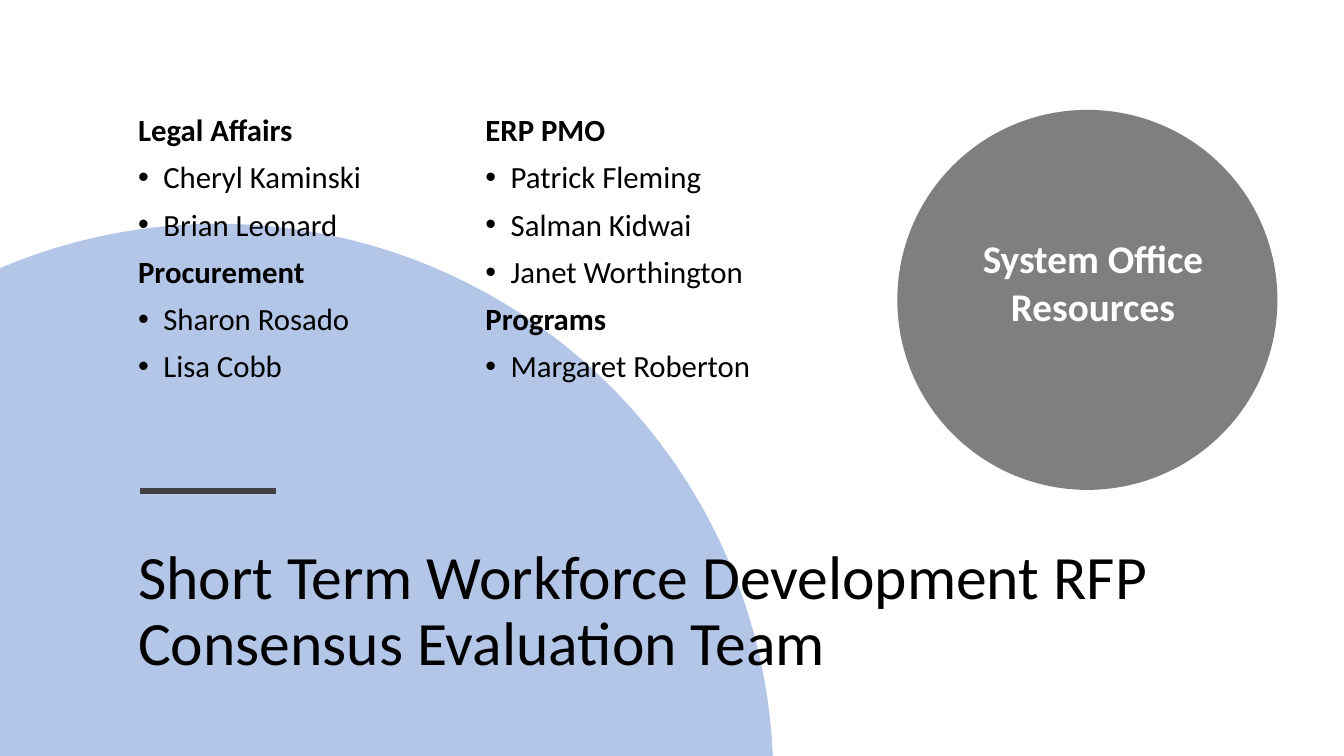
import math

import pptx
import pptx.util
import pptx.dml.color
import pptx.enum.shapes
import pptx.enum.text
import pptx.oxml
import pptx.oxml.ns

Inches = pptx.util.Inches
Pt = pptx.util.Pt
RGBColor = pptx.dml.color.RGBColor
ALIGN = pptx.enum.text.PP_ALIGN
ANCHOR = pptx.enum.text.MSO_ANCHOR

BLACK = RGBColor(0x00, 0x00, 0x00)
WHITE = RGBColor(0xFF, 0xFF, 0xFF)
BLUE = RGBColor(0x44, 0x72, 0xC4)
CHARCOAL = RGBColor(0x40, 0x40, 0x40)
FONT = "Calibri"
TITLE = "Short Term Workforce Development RFP Consensus Evaluation Team"
TEAMS = {
    "Legal Affairs": ["Cheryl Kaminski", "Brian Leonard"],
    "Procurement": ["Sharon Rosado", "Lisa Cobb"],
    "ERP PMO": ["Patrick Fleming", "Salman Kidwai", "Janet Worthington"],
    "Programs": ["Margaret Roberton"],
}


def add_xml(parent, tag, **attributes):
    child = pptx.oxml.parse_xml(f"<a:{tag} {pptx.oxml.ns.nsdecls('a')}/>")
    for name, value in attributes.items():
        child.set(name, str(value))
    parent.append(child)
    return child


def place(shape, box):
    shape.left, shape.top, shape.width, shape.height = map(Inches, box)


def style_para(para, size, color, bold=False):
    for span in para.runs:
        span.font.name = FONT
        span.font.size = Pt(size)
        span.font.bold = bold
        span.font.color.rgb = color


def paint(shape, color, opacity):
    shape.shadow.inherit = False
    shape.fill.solid()
    shape.fill.fore_color.rgb = color
    shape.line.fill.background()
    for node in shape.fill._xPr.iter(pptx.oxml.ns.qn("a:srgbClr")):
        add_xml(node, "alpha", val=opacity * 1000)


def add_backdrop(page, box):
    left, top, width, height = box
    radius = 5.51
    center_x, center_y = left + 2.16, top + radius
    bottom = top + height
    start = math.acos((left - center_x) / radius)
    end = math.asin((center_y - bottom) / radius)
    steps = 120
    angles = [start + (end - start) * step / steps for step in range(steps + 1)]
    arc = [
        (Inches(center_x + radius * math.cos(angle)), Inches(center_y - radius * math.sin(angle)))
        for angle in angles
    ]
    builder = page.shapes.build_freeform(Inches(left), Inches(bottom))
    builder.add_line_segments(arc, close=True)
    paint(builder.convert_to_shape(), BLUE, 40)


def add_title(page, box):
    title = page.shapes.title
    place(title, box)
    frame = title.text_frame
    frame.text = TITLE
    frame.word_wrap = True
    frame.auto_size = pptx.enum.text.MSO_AUTO_SIZE.NONE
    frame.vertical_anchor = ANCHOR.MIDDLE
    para = frame.paragraphs[0]
    para.alignment = ALIGN.LEFT
    para.line_spacing = 0.9
    style_para(para, 44, BLACK)


def add_teams(page, box):
    body = page.placeholders[1]
    place(body, box)
    frame = body.text_frame
    lines = [
        (text, text == team)
        for team, members in TEAMS.items()
        for text in [team, *members]
    ]
    frame.text = "\n".join(text for text, heading in lines)
    frame.word_wrap = True
    frame.auto_size = pptx.enum.text.MSO_AUTO_SIZE.NONE
    frame.vertical_anchor = ANCHOR.TOP
    frame.margin_bottom = Inches(0.35)
    frame._txBody.bodyPr.set("numCol", "2")
    for para, (text, heading) in zip(frame.paragraphs, lines):
        para.line_spacing = 0.9
        para.space_before = Pt(10)
        style_para(para, 22, BLACK, heading)
        indent = 0 if heading else Inches(0.25)
        properties = para._p.get_or_add_pPr()
        properties.set("marL", str(indent))
        properties.set("indent", str(-indent))
        if heading:
            add_xml(properties, "buNone")
        else:
            add_xml(properties, "buFont", typeface="Arial")
            add_xml(properties, "buChar", char="•")


def add_rule(page, box):
    left, top, width, height = box
    rule = page.shapes.add_connector(
        pptx.enum.shapes.MSO_CONNECTOR.STRAIGHT,
        Inches(left), Inches(top), Inches(left + width), Inches(top + height),
    )
    rule.line.color.rgb = CHARCOAL
    rule.line.width = Pt(4)
    add_xml(rule._element.spPr, "effectLst")


def add_resources(page, box):
    left, top, width, height = box
    circle = page.shapes.add_shape(
        pptx.enum.shapes.MSO_SHAPE.OVAL, *map(Inches, box)
    )
    paint(circle, BLACK, 50)
    table_box = (left + 0.35, top + 1.2, 2.98, 1.46)
    table = page.shapes.add_table(1, 1, *map(Inches, table_box)).table
    table.first_row = False
    table.horz_banding = False
    cell = table.cell(0, 0)
    cell_properties = cell._tc.get_or_add_tcPr()
    for side in ("lnL", "lnR", "lnT", "lnB"):
        add_xml(add_xml(cell_properties, side, w=0), "noFill")
    cell.fill.background()
    cell.text_frame.text = "System Office Resources"
    para = cell.text_frame.paragraphs[0]
    para.alignment = ALIGN.CENTER
    para._p.get_or_add_pPr().set("marL", str(Inches(0.2)))
    style_para(para, 28, WHITE, True)


def main():
    deck = pptx.Presentation()
    deck.slide_width = Inches(13.33)
    deck.slide_height = Inches(7.5)
    page = deck.slides.add_slide(deck.slide_layouts[1])
    page.background.fill.solid()
    page.background.fill.fore_color.rgb = WHITE
    add_backdrop(page, (0, 2.22, 7.66, 5.28))
    backdrop = page.shapes[-1]._element
    page.shapes.title._element.addprevious(backdrop)
    add_title(page, (1.27, 5.35, 11.27, 1.45))
    add_teams(page, (1.27, 1.09, 7.09, 3.28))
    add_rule(page, (1.39, 4.87, 1.35, 0))
    add_resources(page, (8.9, 1.09, 3.77, 3.77))
    deck.save("out.pptx")


if __name__ == "__main__":
    main()
